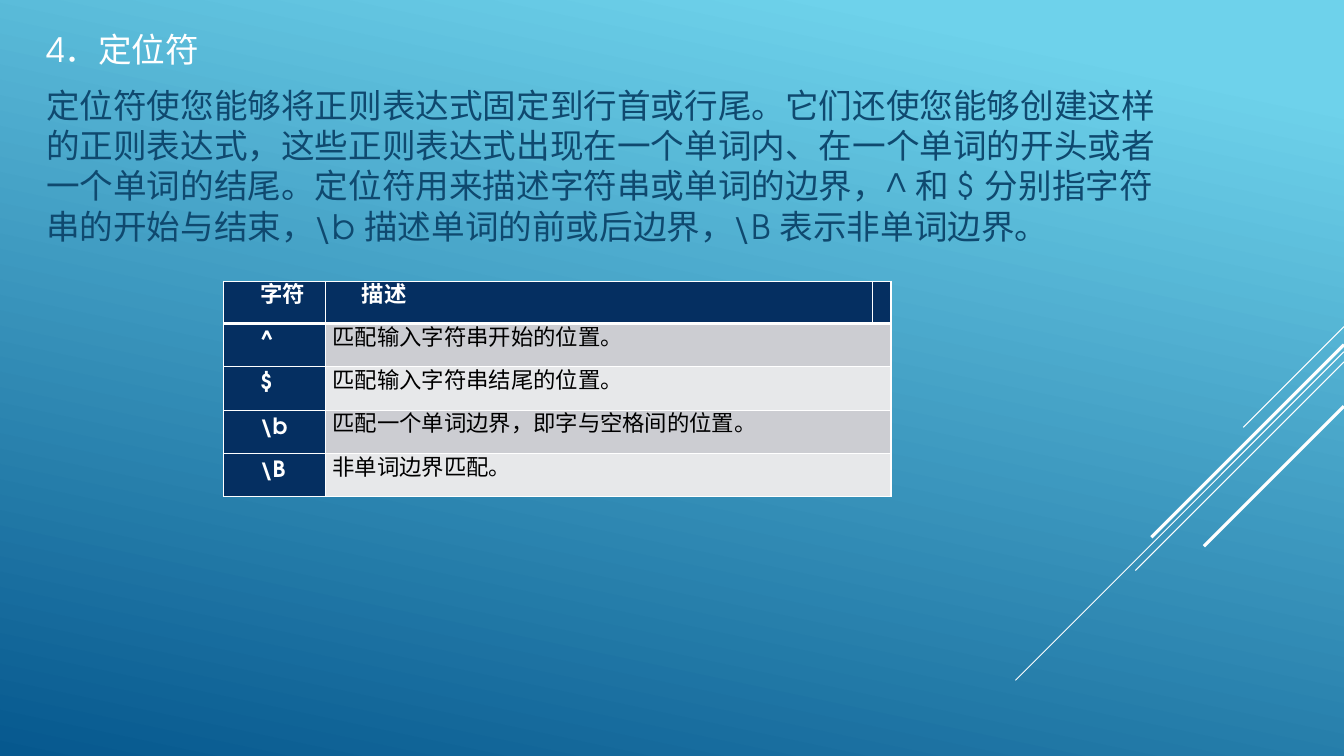
from dataclasses import dataclass

from lxml import etree
from pptx import Presentation
from pptx.dml.color import RGBColor
from pptx.enum.shapes import MSO_CONNECTOR
from pptx.enum.text import MSO_ANCHOR, MSO_AUTO_SIZE
from pptx.oxml.ns import qn
from pptx.util import Inches, Pt

STRAIGHT = MSO_CONNECTOR.STRAIGHT
TOP = MSO_ANCHOR.TOP
NO_FIT = MSO_AUTO_SIZE.NONE

GRID_COLUMNS, GRID_ROWS = 160, 90
UNIT = Inches(13.33333) / GRID_COLUMNS
FONT = "TeX Gyre Adventor"
WHITE, BLACK, NAVY, INK = "FFFFFF", "000000", "052F61", "0F496F"
BANDS = ("CCCDD2", "E7E8EA")
SKY, DEEP = "6ED2EB", "06588E"
HEADER_RULE, THIN_RULE = 3, 1


@dataclass(frozen=True)
class Streak:
    start_row: float
    run: float
    width: float


@dataclass(frozen=True)
class CellLook:
    fill: str
    color: str
    bold: bool
    indent: float


STREAKS = (
    Streak(38.88, 12, 0.75),
    Streak(41.88, 39.12, 0.75),
    Streak(43.08, 24.84, 0.75),
    Streak(41.04, 22.92, 2.25),
    Streak(48.36, 16.68, 2.25),
)
PARAGRAPHS = (
    ("4．定位符", WHITE),
    (
        "定位符使您能够将正则表达式固定到行首或行尾。它们还使您能够创建这样"
        "的正则表达式，这些正则表达式出现在一个单词内、在一个单词的开头或者"
        "一个单词的结尾。定位符用来描述字符串或单词的边界，^ 和 $ 分别指字"
        r"符串的开始与结束，\b 描述单词的前或后边界，\B 表示非单词边界。",
        INK,
    ),
)
ANCHORS = (
    ("字符", "描述", ""),
    ("^", "匹配输入字符串开始的位置。", ""),
    ("$", "匹配输入字符串结尾的位置。", ""),
    (r"\b", "匹配一个单词边界，即字与空格间的位置。", ""),
    (r"\B", "非单词边界匹配。", ""),
)
COLUMN_WIDTHS = (12.12, 65.16, 1.44)
ROW_HEIGHTS = (5.04,) + (5.16,) * 4
KEY_LOOK = CellLook(NAVY, WHITE, True, 3.48)


def grid(count: float) -> int:
    return round(count * UNIT)


def hex_color(value: str) -> RGBColor:
    return RGBColor.from_string(value)


def apply_format(target, values: dict) -> None:
    for name, value in values.items():
        setattr(target, name, value)


def add_span(para, text: str, size: float, color: str, bold: bool) -> None:
    span = para.add_run()
    span.text = text
    apply_format(span.font, {"name": FONT, "size": Pt(size), "bold": bold})
    span.font.color.rgb = hex_color(color)


def paint_background(page) -> None:
    fill = page.background.fill
    fill.gradient()
    fill.gradient_angle = 258
    for stop, position, color in zip(fill.gradient_stops, (0.1, 1), (SKY, DEEP)):
        stop.position = position
        stop.color.rgb = hex_color(color)


def draw_streak(page, streak: Streak) -> None:
    line = page.shapes.add_connector(
        STRAIGHT,
        grid(GRID_COLUMNS),
        grid(streak.start_row),
        grid(GRID_COLUMNS - streak.run),
        grid(streak.start_row + streak.run),
    )
    line.line.color.rgb = hex_color(WHITE)
    line.line.width = Pt(streak.width)
    etree.SubElement(line.element.spPr, qn("a:effectLst"))


def draw_body(page) -> None:
    box = page.shapes.add_textbox(grid(4.32), grid(2.88), grid(137.52), grid(75.36))
    frame = box.text_frame
    apply_format(frame, {"word_wrap": True, "auto_size": NO_FIT, "vertical_anchor": TOP})
    for index, (text, color) in enumerate(PARAGRAPHS):
        para = frame.add_paragraph() if index else frame.paragraphs[0]
        apply_format(para, {"space_before": Pt(4.8), "space_after": Pt(6)})
        add_span(para, text, 24, color, False)


def add_borders(cell, top: float, bottom: float) -> None:
    properties = cell._tc.get_or_add_tcPr()
    for side, width in (("L", THIN_RULE), ("R", THIN_RULE), ("T", top), ("B", bottom)):
        border = etree.SubElement(properties, qn(f"a:ln{side}"), w=str(Pt(width)))
        solid = etree.SubElement(border, qn("a:solidFill"))
        etree.SubElement(solid, qn("a:srgbClr"), val=WHITE)


def look_for(row: int, column: int) -> CellLook:
    if row == 0 or column == 0:
        return KEY_LOOK
    return CellLook(BANDS[(row - 1) % 2], BLACK, False, 0)


def fill_cell(cell, text: str, row: int, look: CellLook) -> None:
    add_borders(
        cell,
        HEADER_RULE if row == 1 else THIN_RULE,
        HEADER_RULE if row == 0 else THIN_RULE,
    )
    cell.fill.solid()
    cell.fill.fore_color.rgb = hex_color(look.fill)
    side = grid(0.84)
    apply_format(cell, {
        "margin_left": side, "margin_right": side,
        "margin_top": 0, "margin_bottom": 0, "vertical_anchor": TOP,
    })
    para = cell.text_frame.paragraphs[0]
    para.line_spacing = Pt(20)
    if text:
        paragraph_properties = para._p.get_or_add_pPr()
        paragraph_properties.set("marL", "0")
        paragraph_properties.set("indent", str(grid(look.indent)))
        add_span(para, text, 16, look.color, look.bold)


def draw_table(page) -> None:
    table = page.shapes.add_table(
        len(ANCHORS), len(COLUMN_WIDTHS), grid(26.64), grid(33.48),
        grid(sum(COLUMN_WIDTHS)), grid(sum(ROW_HEIGHTS)),
    ).table
    apply_format(table, {"first_row": False, "horz_banding": False})
    for column, width in zip(table.columns, COLUMN_WIDTHS):
        column.width = grid(width)
    for row, height in zip(table.rows, ROW_HEIGHTS):
        row.height = grid(height)
    for row, texts in enumerate(ANCHORS):
        for column, text in enumerate(texts):
            fill_cell(table.cell(row, column), text, row, look_for(row, column))
        if row:
            table.cell(row, 1).merge(table.cell(row, 2))


def main() -> None:
    deck = Presentation()
    apply_format(deck, {"slide_width": grid(GRID_COLUMNS), "slide_height": grid(GRID_ROWS)})
    page = deck.slides.add_slide(deck.slide_layouts[6])
    paint_background(page)
    for streak in STREAKS:
        draw_streak(page, streak)
    draw_body(page)
    draw_table(page)
    deck.save("out.pptx")


if __name__ == "__main__":
    main()
